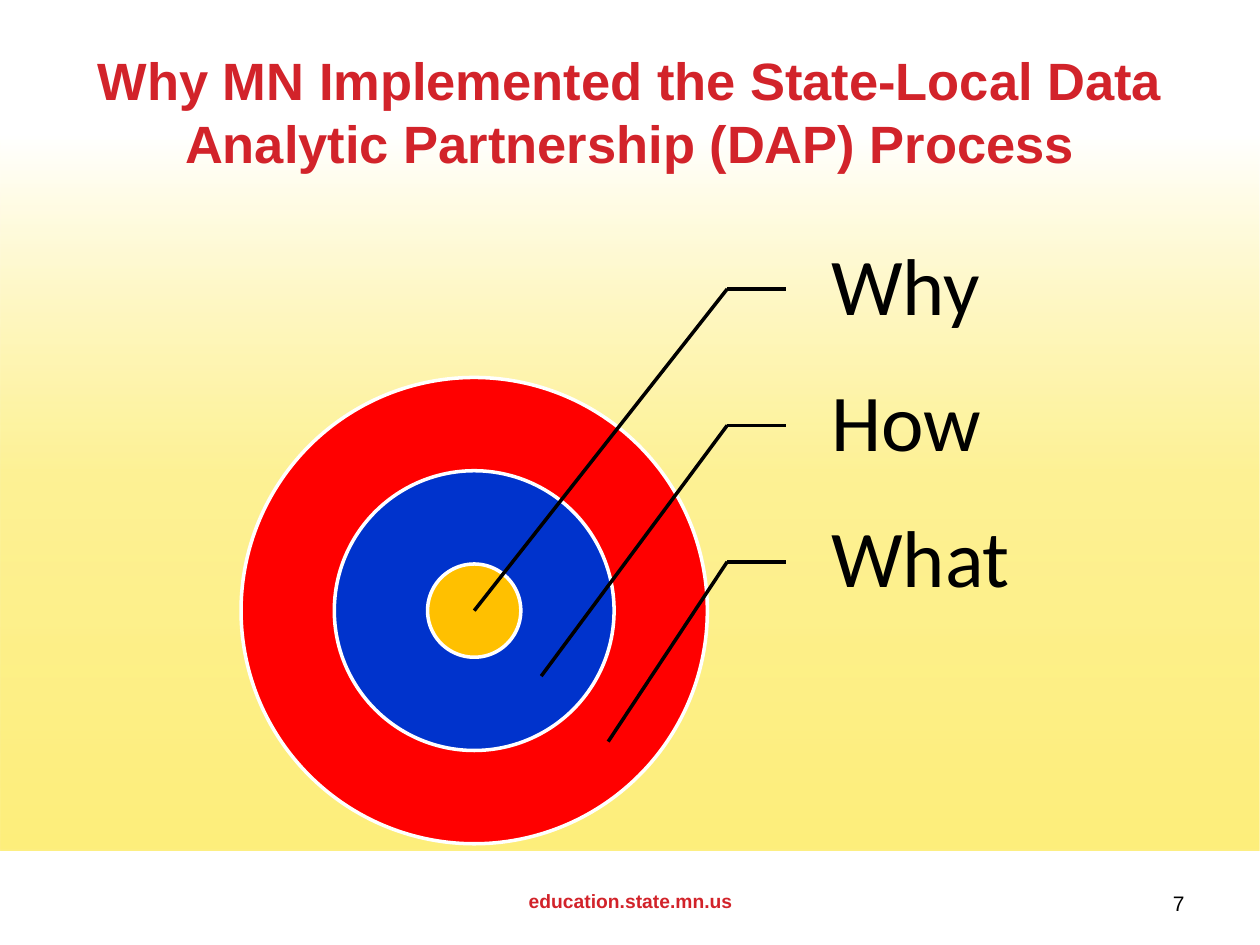
import pptx
import pptx.dml.color
import pptx.enum.shapes
import pptx.enum.text
import pptx.oxml
import pptx.oxml.ns
import pptx.util
from lxml import etree

Cm = pptx.util.Cm
Pt = pptx.util.Pt
ALIGN = pptx.enum.text.PP_ALIGN
ANCHOR = pptx.enum.text.MSO_ANCHOR
SHAPE = pptx.enum.shapes.MSO_SHAPE

TITLE = "Why MN Implemented the State-Local Data Analytic Partnership (DAP) Process"
WEB_ADDRESS = "education.state.mn.us"
SLIDE_NUMBER = "7"
RINGS = [("FF0000", 5), ("0033CC", 3), ("FFC000", 1)]  # colour, radius in ring widths
LABELS = ["Why", "How", "What"]
GRADIENT = [(0, "FDEE7B", 100), (44, "FDEE7B", 80), (84, "FFFFFF", 100)]  # %, colour, opacity %

RED, BLACK, WHITE = "D2232A", "000000", "FFFFFF"
HEADING = {"name": "Arial", "size": Pt(30), "bold": True}
FOOTER = {"name": "Arial", "size": Pt(11), "bold": True}
NUMBER = {"name": "Arial", "size": Pt(12)}
LABEL = {"name": "Calibri", "size": Pt(46)}

# Lengths in centimetres
CENTRE_X, CENTRE_Y, RING_WIDTH = 9.56, 12.31, 0.94
LABEL_LEFT, LABEL_TOP, LABEL_WIDTH, LABEL_HEIGHT = 15.85, 4.45, 4.72, 2.75
ELBOW_X = 14.66
POINTER_STEP_X, POINTER_STEP_Y = 1.35, 1.32


def colour(value):
    return pptx.dml.color.RGBColor.from_string(value)


def write_text(shape, text, font, text_colour, align, anchor, line_spacing=None,
               insets=(0.25, 0.13, 0.25, 0.13)):
    frame = shape.text_frame
    frame.word_wrap = True
    frame.auto_size = pptx.enum.text.MSO_AUTO_SIZE.NONE
    frame.vertical_anchor = anchor
    for side, inset in zip(("left", "top", "right", "bottom"), insets):
        setattr(frame, "margin_" + side, Cm(inset))
    paragraph = frame.paragraphs[0]
    paragraph.alignment = align
    paragraph.line_spacing = line_spacing
    run = paragraph.add_run()
    run.text = text
    for name, value in font.items():
        setattr(run.font, name, value)
    run.font.color.rgb = colour(text_colour)


def add_text(slide, box, *text_format, **options):
    shape = slide.shapes.add_textbox(*map(Cm, box))
    write_text(shape, *text_format, **options)


def add_line(slide, start, end):
    line = slide.shapes.add_connector(
        pptx.enum.shapes.MSO_CONNECTOR.STRAIGHT, *map(Cm, start + end))
    line.line.color.rgb = colour(BLACK)
    line.line.width = Pt(2)
    etree.SubElement(line._element.spPr, pptx.oxml.ns.qn("a:effectLst"))


def add_background(slide):
    """Add the upward gradient panel behind everything else."""
    panel = slide.shapes.add_shape(SHAPE.RECTANGLE, 0, 0, Cm(25.4), Cm(17.15))
    panel.shadow.inherit = False
    panel.line.fill.background()
    stops = "".join(
        f'<a:gs pos="{position * 1000}"><a:srgbClr val="{value}">'
        f'<a:alpha val="{opacity * 1000}"/></a:srgbClr></a:gs>'
        for position, value, opacity in GRADIENT)
    gradient = pptx.oxml.parse_xml(
        f'<a:gradFill {pptx.oxml.ns.nsdecls("a")} rotWithShape="1"><a:gsLst>{stops}</a:gsLst>'
        '<a:lin ang="16200000" scaled="0"/></a:gradFill>')
    panel._element.spPr.find(pptx.oxml.ns.qn("a:prstGeom")).addnext(gradient)
    slide.shapes._spTree.insert(2, panel._element)


def add_target(slide):
    for fill, widths in RINGS:
        radius = widths * RING_WIDTH
        ring = slide.shapes.add_shape(
            SHAPE.OVAL, Cm(CENTRE_X - radius), Cm(CENTRE_Y - radius),
            Cm(2 * radius), Cm(2 * radius))
        ring.shadow.inherit = False
        ring.fill.solid()
        ring.fill.fore_color.rgb = colour(fill)
        ring.line.color.rgb = colour(WHITE)
        ring.line.width = Pt(2)


def add_labels(slide):
    for index, label in enumerate(LABELS):
        top = LABEL_TOP + index * LABEL_HEIGHT
        elbow = (ELBOW_X, top + LABEL_HEIGHT / 2)
        pointer_end = (CENTRE_X + index * POINTER_STEP_X, CENTRE_Y + index * POINTER_STEP_Y)
        add_text(slide, (LABEL_LEFT, top, LABEL_WIDTH, LABEL_HEIGHT), label, LABEL, BLACK,
                 ALIGN.LEFT, ANCHOR.MIDDLE, line_spacing=0.9, insets=(0.91, 0.15, 0.15, 0.15))
        add_line(slide, elbow, (LABEL_LEFT, elbow[1]))
        add_line(slide, elbow, pointer_end)


def main():
    presentation = pptx.Presentation()
    presentation.slide_width, presentation.slide_height = Cm(25.4), Cm(19.05)
    slide = presentation.slides.add_slide(presentation.slide_layouts[5])
    add_background(slide)
    title = slide.shapes.title
    title.left, title.top, title.width, title.height = map(Cm, (1.27, 0.84, 22.86, 3.18))
    write_text(title, TITLE, HEADING, RED, ALIGN.CENTER, ANCHOR.TOP, line_spacing=Pt(36))
    add_text(slide, (8.69, 17.65, 8.05, 1.02), WEB_ADDRESS, FOOTER, RED,
             ALIGN.CENTER, ANCHOR.MIDDLE)
    add_text(slide, (18.21, 17.83, 5.92, 1.02), SLIDE_NUMBER, NUMBER, BLACK,
             ALIGN.RIGHT, ANCHOR.TOP)
    add_target(slide)
    add_labels(slide)
    presentation.save("out.pptx")


if __name__ == "__main__":
    main()
